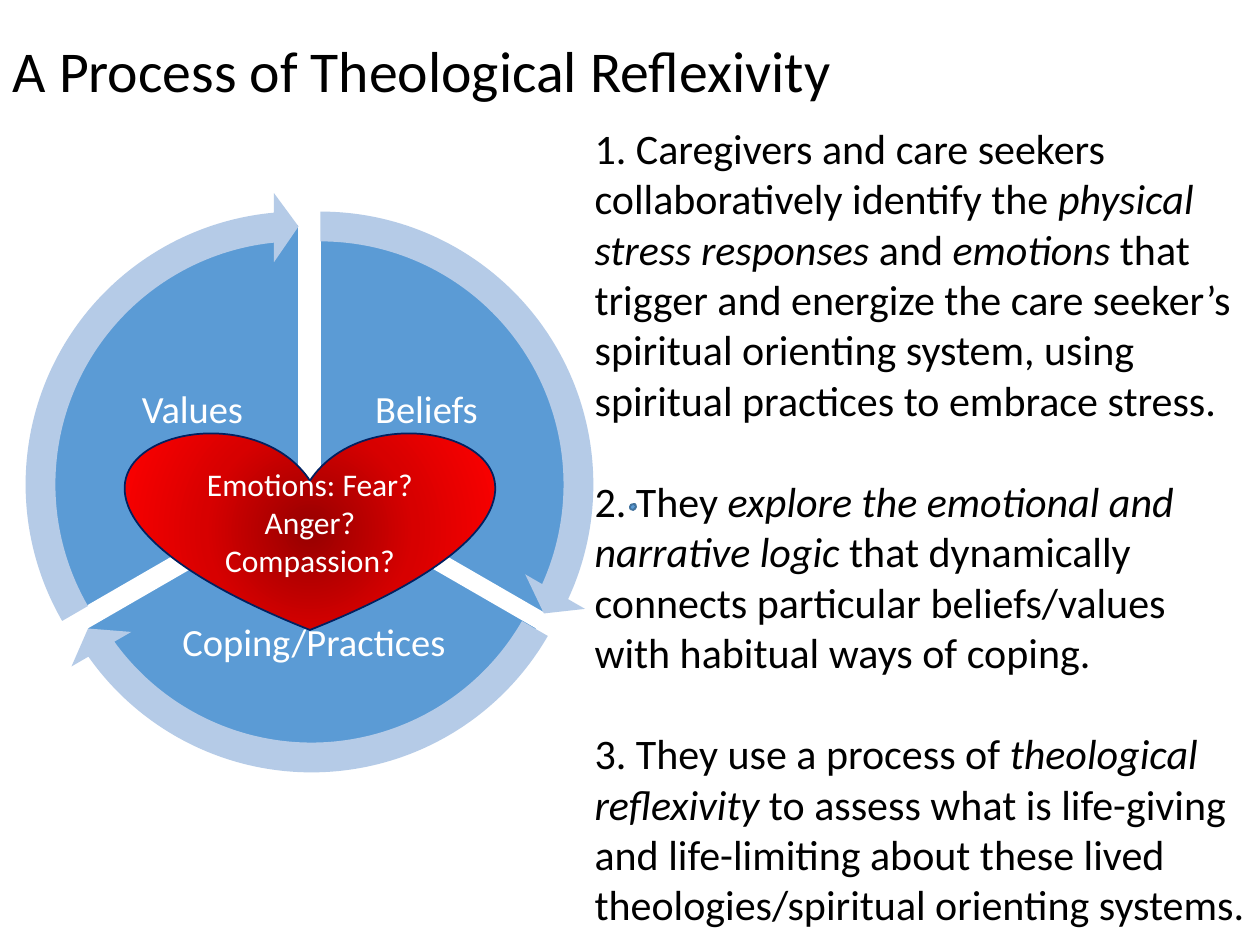
from pptx import Presentation
from pptx.dml.color import RGBColor
from pptx.enum.shapes import MSO_SHAPE as Shape
from pptx.enum.text import MSO_ANCHOR as Anchor, MSO_AUTO_SIZE as AutoSize, PP_ALIGN as Align
from pptx.oxml import parse_xml
from pptx.oxml.ns import nsdecls
from pptx.util import Inches, Pt

PX = Inches(10) / 1260
FONT = "Calibri"
COLORS = {
    "black": "000000", "white": "FFFFFF", "blue": "5B9BD5", "pale": "B5CBE7",
    "edge": "43739E", "navy": "002060",
    "heart_core": "970000", "heart_mid": "D70000", "heart_rim": "FF0000",
}
PIE_SIZE, ARROW_SIZE = 520, 585
SECTORS = [
    ("Beliefs", (60, 224), (162, 18), (334, 334, 185, 155), (28, 192), (14.725, 161.994)),
    ("Coping/Practices", (52, 238), (18, 90), (175, 576, 278, 136), (19, 207), (86.72, 18.005)),
    ("Values", (39, 224), (90, 162), (100, 334, 185, 155), (6, 192), (158.73, 90)),
]
STEPS = [
    ["1. Caregivers and care seekers collaboratively identify the ", "physical stress responses",
     " and ", "emotions ", "that trigger and energize the care seeker’s spiritual orienting system, "
     "using spiritual practices to embrace stress."],
    ["2. They ", "explore the emotional and narrative logic ",
     "that dynamically connects particular beliefs/values with habitual ways of coping."],
    ["3. They use a process of ", "theological reflexivity",
     " to assess what is life-giving and life-limiting about these lived "
     "theologies/spiritual orienting systems."],
]


def px(*lengths):
    return [round(length * PX) for length in lengths]


def rgb(name):
    return RGBColor.from_string(COLORS[name])


def place(item, box):
    item.left, item.top, item.width, item.height = px(*box)


def style_runs(paragraph, size, color):
    for run in paragraph.runs:
        run.font.name = FONT
        run.font.size = Pt(size)
        run.font.color.rgb = rgb(color)


def add_outline(shapes, preset, box, fill=None, line=None, adjustments=()):
    outline = shapes.add_shape(preset, *px(*box))
    outline.shadow.inherit = False
    for index, value in enumerate(adjustments):
        outline.adjustments[index] = value
    if fill:
        outline.fill.solid()
        outline.fill.fore_color.rgb = rgb(fill)
    if line:
        outline.line.color.rgb = rgb(line)
        outline.line.width = Pt(1)
    else:
        outline.line.fill.background()
    return outline


def write_centered(frame, text, size):
    frame.word_wrap = True
    frame.vertical_anchor = Anchor.MIDDLE
    frame.text = text
    paragraph = frame.paragraphs[0]
    paragraph.alignment = Align.CENTER
    style_runs(paragraph, size, "white")
    return paragraph


def add_label(shapes, text, box):
    frame = shapes.add_textbox(*px(*box)).text_frame
    frame.margin_left = frame.margin_top = frame.margin_right = frame.margin_bottom = Inches(0.03)
    write_centered(frame, text, 22).line_spacing = 0.9


def add_cycle(slide):
    cycle = slide.shapes.add_group_shape().shapes
    for name, corner, angles, label_box, _, _ in SECTORS:
        add_outline(cycle, Shape.PIE, (*corner, PIE_SIZE, PIE_SIZE), "blue", "white", angles)
        add_label(cycle, name, label_box)
    for _, _, _, _, corner, (end, start) in SECTORS:
        add_outline(cycle, Shape.CIRCULAR_ARROW, (*corner, ARROW_SIZE, ARROW_SIZE), "pale",
                    adjustments=(0.051, 3.275, end, start, 0.059))


def add_heart(slide):
    heart = add_outline(slide.shapes, Shape.HEART, (126, 431, 368, 199), line="navy")
    stops = "".join(
        f'<a:gs pos="{position}"><a:srgbClr val="{COLORS[name]}"/></a:gs>'
        for position, name in ((0, "heart_core"), (50000, "heart_mid"), (100000, "heart_rim")))
    gradient = parse_xml(
        f'<a:gradFill {nsdecls("a")} rotWithShape="1"><a:gsLst>{stops}</a:gsLst>'
        '<a:path path="circle"><a:fillToRect l="50000" t="50000" r="50000" b="50000"/></a:path>'
        '</a:gradFill>')
    heart.element.spPr.prstGeom.addnext(gradient)
    write_centered(heart.text_frame, "Emotions: Fear? Anger? Compassion?", 18)


def fill_title(title):
    place(title, (0, 0, 892, 147))
    frame = title.text_frame
    frame.text = "A Process of Theological Reflexivity"
    frame.auto_size = AutoSize.NONE
    frame.vertical_anchor = Anchor.MIDDLE
    heading = frame.paragraphs[0]
    heading.alignment = Align.LEFT
    heading.line_spacing = 0.9
    style_runs(heading, 33, "black")


def fill_steps(body):
    place(body, (582, 116, 678, 827))
    frame = body.text_frame
    frame.auto_size = AutoSize.SHAPE_TO_FIT_TEXT
    for index, phrases in enumerate(STEPS):
        step = frame.add_paragraph() if index else frame.paragraphs[0]
        for position, phrase in enumerate(phrases):
            run = step.add_run()
            run.text = phrase
            run.font.italic = position % 2 == 1
        style_runs(step, 24, "black")
        step.space_before = Pt(0)
        step.space_after = Pt(29 if index < len(STEPS) - 1 else 0)
        properties = step._p.get_or_add_pPr()
        properties.set("marL", "0")
        properties.set("indent", "0")
        properties.append(parse_xml(f'<a:buNone {nsdecls("a")}/>'))


def main():
    deck = Presentation()
    deck.slide_width, deck.slide_height = px(1260, 945)
    slide = deck.slides.add_slide(deck.slide_layouts[1])
    fill_title(slide.shapes.title)
    add_cycle(slide)
    add_outline(slide.shapes, Shape.CLOUD, (630, 504, 6, 6), "blue", "edge")
    add_heart(slide)
    fill_steps(slide.placeholders[1])
    deck.save("out.pptx")


if __name__ == "__main__":
    main()
